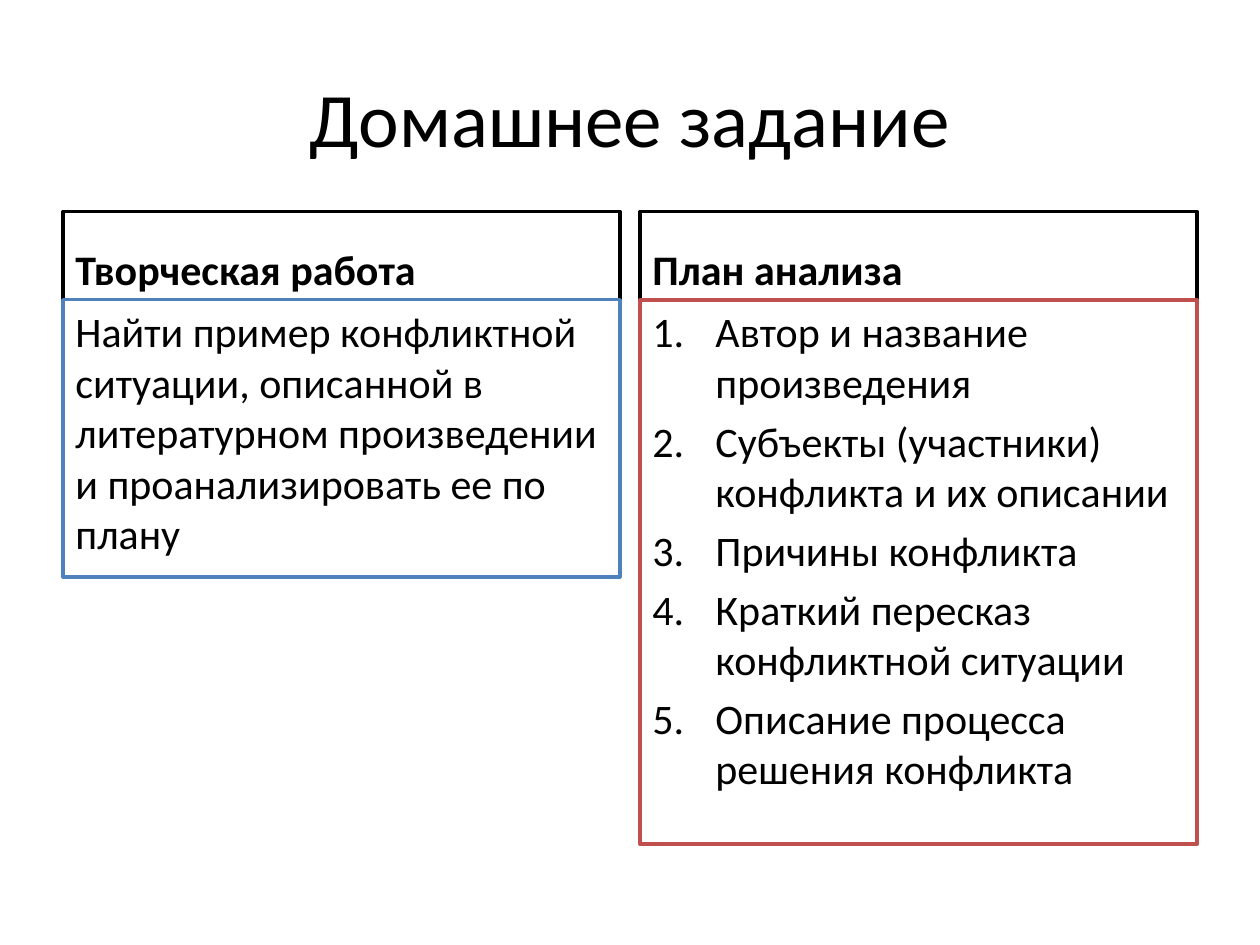
import pptx
import pptx.dml.color
import pptx.enum.shapes
import pptx.enum.text
import pptx.oxml.ns
import pptx.util
from lxml import etree

Pt = pptx.util.Pt
ANCHOR = pptx.enum.text.MSO_ANCHOR
ALIGN = pptx.enum.text.PP_ALIGN
COLORS = {"text": "000000", "paper": "FFFFFF", "blue": "4F81BD", "red": "C0504D"}
TITLE_FORMAT = {"name": "Calibri", "size": Pt(44), "bold": False}
HEADING_FORMAT = {"name": "Calibri", "size": Pt(24), "bold": True}
BODY_FORMAT = {"name": "Calibri", "size": Pt(24), "bold": False}

MARGIN, COLUMN_WIDTH, COLUMN_GAP = 36, 318.25, 11.5
COLUMN_TOP, HEADING_HEIGHT = 120.9, 50.4
NUMBER_INDENT = 36
COLUMNS = [
    {
        "heading": "Творческая работа",
        "items": ["Найти пример конфликтной ситуации, описанной в литературном "
                  "произведении и проанализировать ее по плану"],
        "color": "blue", "body_height": 158.4, "numbered": False,
    },
    {
        "heading": "План анализа",
        "items": [
            "Автор и название произведения",
            "Субъекты (участники) конфликта и их описании",
            "Причины конфликта",
            "Краткий пересказ конфликтной ситуации",
            "Описание процесса решения конфликта",
        ],
        "color": "red", "body_height": 311.1, "numbered": True,
    },
]


def rgb(name):
    """Return the named colour."""
    return pptx.dml.color.RGBColor.from_string(COLORS[name])


def write_paragraph(paragraph, text, text_format, alignment):
    """Put formatted text into a paragraph."""
    paragraph.alignment = alignment
    run = paragraph.add_run()
    run.text = text
    for attribute, value in text_format.items():
        setattr(run.font, attribute, value)
    run.font.color.rgb = rgb("text")


def number_paragraph(paragraph):
    """Give a paragraph an automatic number and a hanging indent."""
    properties = paragraph._p.get_or_add_pPr()
    properties.set("marL", str(Pt(NUMBER_INDENT)))
    properties.set("indent", str(-Pt(NUMBER_INDENT)))
    number = etree.SubElement(properties, pptx.oxml.ns.qn("a:buAutoNum"))
    number.set("type", "arabicPeriod")


def add_title(slide, text, left, top, width, height):
    """Place and format the title placeholder."""
    title = slide.shapes.title
    title.left, title.top = Pt(left), Pt(top)
    title.width, title.height = Pt(width), Pt(height)
    title.text_frame.vertical_anchor = ANCHOR.MIDDLE
    write_paragraph(title.text_frame.paragraphs[0], text, TITLE_FORMAT, ALIGN.CENTER)


def add_panel(slide, box, items, line_color, anchor, text_format, numbered=False):
    """Add an outlined rectangle holding one paragraph per item."""
    shape = slide.shapes.add_shape(
        pptx.enum.shapes.MSO_SHAPE.RECTANGLE, *(Pt(length) for length in box))
    shape.shadow.inherit = False
    shape.fill.solid()
    shape.fill.fore_color.rgb = rgb("paper")
    shape.line.color.rgb = rgb(line_color)
    shape.line.width = Pt(2)
    frame = shape.text_frame
    frame.word_wrap = True
    frame.vertical_anchor = anchor
    for index, item in enumerate(items):
        paragraph = frame.add_paragraph() if index else frame.paragraphs[0]
        if numbered:
            number_paragraph(paragraph)
        paragraph.space_before = Pt(4.8 if index else 0)
        write_paragraph(paragraph, item, text_format, ALIGN.LEFT)


def add_column(slide, column, left, top, width):
    """Stack a heading panel on a body panel."""
    add_panel(slide, (left, top, width, HEADING_HEIGHT), [column["heading"]],
              "text", ANCHOR.BOTTOM, HEADING_FORMAT)
    add_panel(slide, (left, top + HEADING_HEIGHT, width, column["body_height"]),
              column["items"], column["color"], ANCHOR.TOP, BODY_FORMAT,
              column["numbered"])


def main():
    """Build and save the homework slide."""
    presentation = pptx.Presentation()
    presentation.slide_width, presentation.slide_height = Pt(720), Pt(540)
    slide = presentation.slides.add_slide(presentation.slide_layouts[5])
    add_title(slide, "Домашнее задание", MARGIN, 21.6, 648, 90)
    for index, column in enumerate(COLUMNS):
        left = MARGIN + index * (COLUMN_WIDTH + COLUMN_GAP)
        add_column(slide, column, left, COLUMN_TOP, COLUMN_WIDTH)
    presentation.save("out.pptx")


if __name__ == "__main__":
    main()
